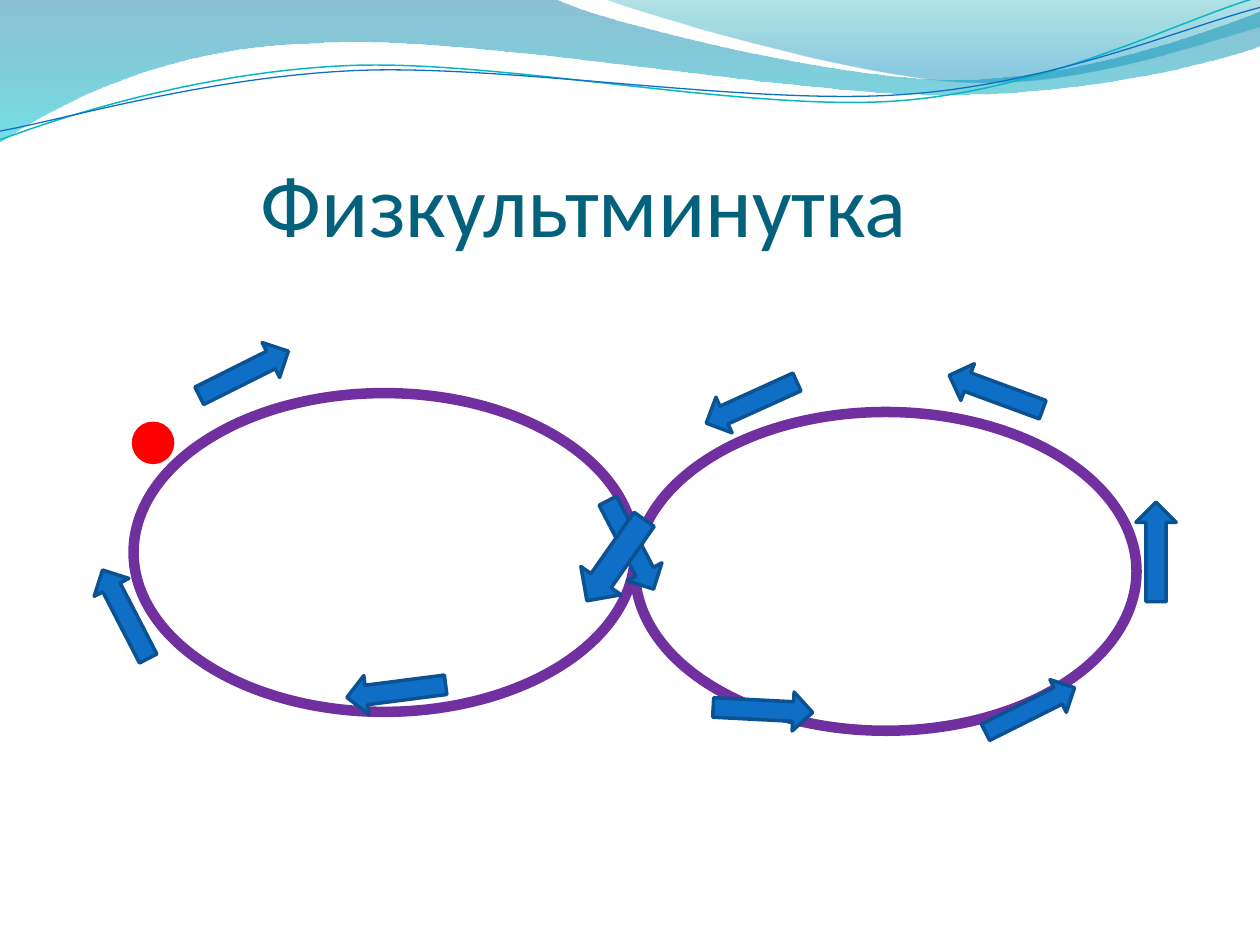
from math import cos, radians, sin

from lxml.etree import SubElement
from pptx import Presentation
from pptx.dml.color import RGBColor
from pptx.enum.shapes import MSO_SHAPE as SHAPE
from pptx.enum.text import MSO_ANCHOR as ANCHOR
from pptx.oxml.ns import qn
from pptx.util import Inches, Pt

TEAL = RGBColor(0x04, 0x61, 0x7B)
BLUE = RGBColor(0x0F, 0x6F, 0xC6)
NAVY = RGBColor(0x0B, 0x52, 0x92)
AQUA = RGBColor(0x0A, 0xB8, 0xBF)
PURPLE = RGBColor(0x70, 0x30, 0xA0)
RED = RGBColor(0xFF, 0x00, 0x00)
WHITE = RGBColor(0xFF, 0xFF, 0xFF)

TITLE = "Физкультминутка"

# Outlines: a pair is a straight step, six numbers are a Bezier curve.
# Gradient stops: position, colour, opacity in percent.
BANDS = [
    ([(0, 0), (4.4, -0.01), (4.76, 0.17, 6.64, 0.63, 7.58, 0.63),
      (8.53, 0.63, 9.58, 0.26, 10, 0.09), (10.01, 0.36),
      (9.83, 0.44, 8.7, 0.76, 7.46, 0.75), (6.22, 0.75, 3.82, 0.28, 2.57, 0.34),
      (1.29, 0.36, 0.46, 0.83, -0.01, 1.13), (0, 0)],
     [(0, RGBColor(0x00, 0x74, 0xA1), 45), (1, RGBColor(0x00, 0xC6, 0xCF), 55)]),
    ([(4.79, -0.01), (5.09, 0.11, 6.82, 0.62, 7.69, 0.65),
      (8.56, 0.69, 9.61, 0.32, 10, 0.21), (10, 0), (4.79, -0.01)],
     [(0, RGBColor(0x00, 0xA1, 0xA9), 30), (0.8, RGBColor(0x00, 0x8B, 0xBF), 45)]),
]
# Outline, centre of the turn, colour, line width
WAVES = [
    ([(0, 1.11), (0.48, 0.93, 1.58, 0.57, 2.77, 0.52),
      (3.95, 0.47, 5.93, 0.89, 7.13, 0.8), (8.33, 0.71, 9.38, 0.15, 9.98, -0.02)],
     (4.99, 0.58), AQUA, 0.85),
    ([(0, 1.04), (0.47, 0.96, 1.64, 0.61, 2.83, 0.56),
      (4.03, 0.51, 5.97, 0.84, 7.17, 0.75), (8.36, 0.67, 9.41, 0.21, 10, 0.06)],
     (5, 0.59), BLUE, 0.75),
]
TILT = 2.7
LOOPS = [(1.06, 3.12), (5.04, 3.27)]
LOOP_W, LOOP_H = 3.98, 2.53
ARROW_W = 0.79
# left, top, height, rotation
ARROWS = [
    (1.54, 2.81, 0.31, 333.4), (4.61, 4.17, 0.31, 62.6), (5.66, 5.48, 0.31, 2.9),
    (7.78, 5.49, 0.29, 333.4), (8.78, 4.22, 0.32, 270), (7.51, 2.96, 0.31, 200.2),
    (5.57, 3.04, 0.31, 155.6), (4.49, 4.25, 0.39, 125.1), (2.75, 5.33, 0.31, 172.7),
    (0.6, 4.72, 0.31, 242.7),
]
BALL = (1.06, 3.36, 0.31, 0.31)


def pairs(part):
    return list(zip(part[::2], part[1::2]))


def level(part, mid):
    """Turn the points of a part clockwise by the tilt."""
    c, s = cos(radians(TILT)), sin(radians(TILT))
    flat = []
    for x, y in pairs(part):
        dx, dy = x - mid[0], y - mid[1]
        flat += [mid[0] + dx * c - dy * s, mid[1] + dx * s + dy * c]
    return flat


def draw(slide, outline, close):
    """Build a freeform, joining each three steps of a curve into one Bezier."""
    points = [(Inches(x), Inches(y)) for part in outline for x, y in pairs(part)]
    pen = slide.shapes.build_freeform(*points[0])
    pen.add_line_segments(points[1:], close=close)
    shape = pen.convert_to_shape()
    shape.shadow.inherit = False
    steps = iter(list(shape.element.spPr.iter(qn("a:lnTo"))))
    for part in outline[1:]:
        group = [next(steps) for _ in pairs(part)]
        if len(group) == 3:
            home = group[0].getparent()
            curve = SubElement(home, qn("a:cubicBezTo"))
            group[0].addprevious(curve)
            for step in group:
                curve.append(step[0])
                home.remove(step)
    return shape


def add_band(slide, outline, stops):
    band = draw(slide, outline, True)
    band.line.fill.background()
    band.fill.gradient()
    band.fill.gradient_angle = 270
    for stop, (spot, color, _) in zip(band.fill.gradient_stops, stops):
        stop.position = spot
        stop.color.rgb = color
    tags = band.element.spPr.iter(qn("a:srgbClr"))
    for tag, (_, _, alpha) in zip(tags, stops):
        SubElement(tag, qn("a:alpha")).set("val", str(alpha * 1000))


def add_wave(slide, outline, mid, color, width):
    wave = draw(slide, [level(part, mid) for part in outline], False)
    wave.rotation = 360 - TILT
    wave.fill.background()
    wave.line.color.rgb = color
    wave.line.width = Pt(width)


def add_form(slide, kind, box, fill, line, width, turn=0):
    form = slide.shapes.add_shape(kind, *map(Inches, box))
    form.shadow.inherit = False
    form.fill.solid()
    form.fill.fore_color.rgb = fill
    form.line.color.rgb = line
    form.line.width = Pt(width)
    form.rotation = turn


def add_text(slide, text, box, size, color, font="Calibri", indent=0):
    frame = slide.shapes.add_textbox(*map(Inches, box)).text_frame
    frame.word_wrap = True
    frame.vertical_anchor = ANCHOR.BOTTOM
    frame.margin_left = Inches(indent)
    frame.margin_top = Inches(0.05)
    frame.margin_right = frame.margin_bottom = 0
    run = frame.paragraphs[0].add_run()
    run.text = text
    run.font.name = font
    run.font.size = Pt(size)
    run.font.color.rgb = color


def main():
    deck = Presentation()
    deck.slide_width, deck.slide_height = Inches(10), Inches(7.5)
    slide = deck.slides.add_slide(deck.slide_layouts[6])
    for band in BANDS:
        add_band(slide, *band)
    for wave in WAVES:
        add_wave(slide, *wave)
    add_text(slide, TITLE, (0.5, 0.77, 9, 1.25), 50, TEAL, indent=1.57)
    for left, top in LOOPS:
        add_form(slide, SHAPE.OVAL, (left, top, LOOP_W, LOOP_H), WHITE, PURPLE, 6)
    for left, top, height, turn in ARROWS:
        add_form(slide, SHAPE.RIGHT_ARROW, (left, top, ARROW_W, height),
                 BLUE, NAVY, 2, turn)
    add_form(slide, SHAPE.OVAL, BALL, RED, RED, 2)
    deck.save("out.pptx")


if __name__ == "__main__":
    main()
